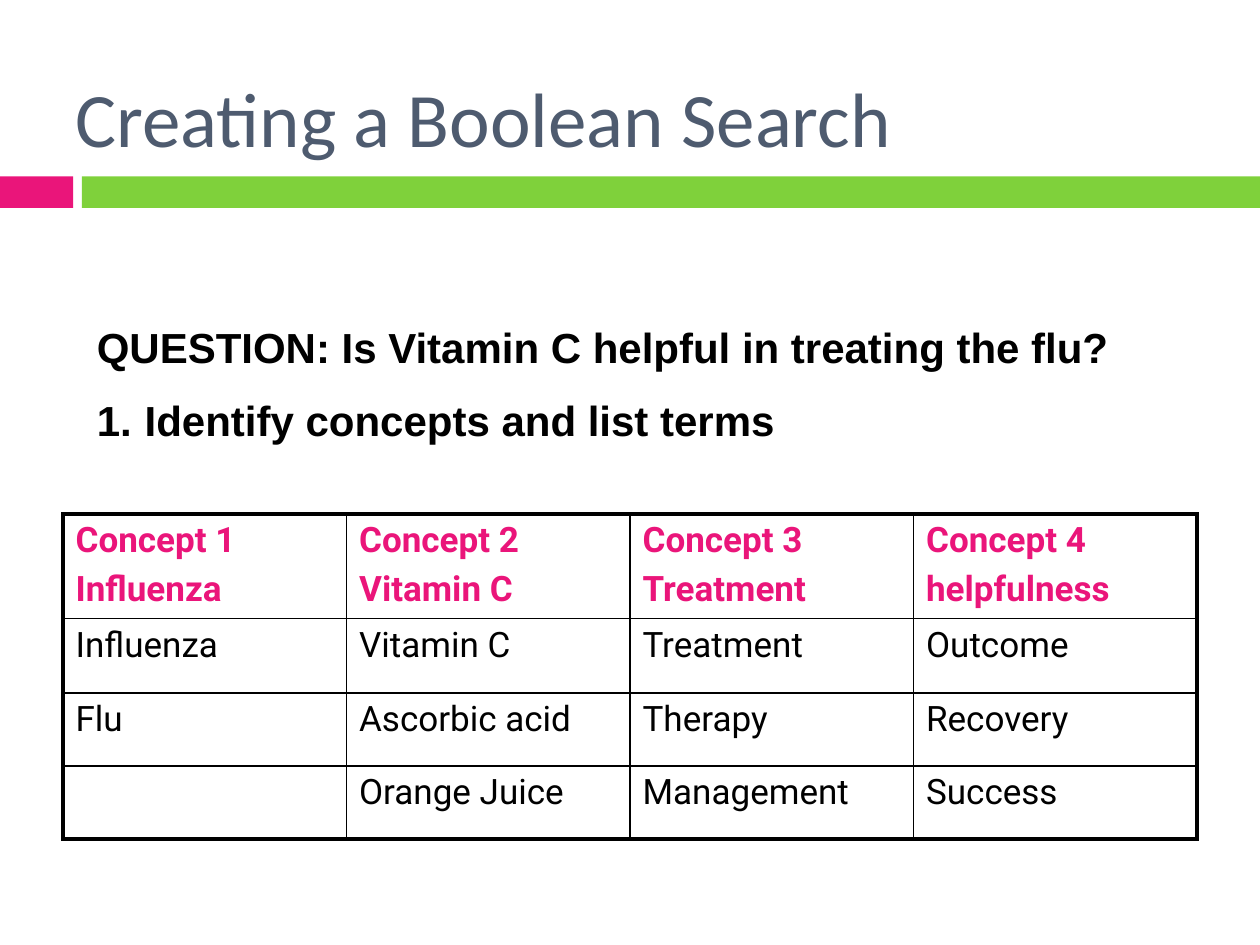
from lxml import etree
from pptx import Presentation
from pptx.dml.color import RGBColor
from pptx.enum.shapes import MSO_SHAPE
from pptx.enum.text import MSO_ANCHOR
from pptx.oxml.ns import qn
from pptx.util import Inches, Pt

RECTANGLE = MSO_SHAPE.RECTANGLE
MIDDLE = MSO_ANCHOR.MIDDLE

PINK = RGBColor(0xEA, 0x15, 0x7A)
GREEN = RGBColor(0x7F, 0xD1, 0x3B)
SLATE = RGBColor(0x4E, 0x5B, 0x6F)
BLACK = RGBColor(0, 0, 0)

SLIDE_W, SLIDE_H = 10, 7.5
THIN, THICK = 1, 2.25

CONCEPTS = [
    ["Concept 1\nInfluenza", "Concept 2\nVitamin C", "Concept 3\nTreatment", "Concept 4\nhelpfulness"],
    ["Influenza", "Vitamin C", "Treatment", "Outcome"],
    ["Flu", "Ascorbic acid", "Therapy", "Recovery"],
    ["", "Orange Juice", "Management", "Success"],
]
ROW_SHARES = [0.83, 0.59, 0.58, 0.58]


def inches(box):
    return [Inches(length) for length in box]


def format_text(frame, font_name, size, color, bold=False, space_before=0):
    for paragraph in frame.paragraphs:
        paragraph.space_before = Pt(space_before)
        for run in paragraph.runs:
            run.font.name = font_name
            run.font.size = Pt(size)
            run.font.bold = bold
            run.font.color.rgb = color


def add_text(slide, box, text):
    frame = slide.shapes.add_textbox(*inches(box)).text_frame
    frame.word_wrap = True
    frame.text = text
    return frame


def add_title(slide, box):
    title = add_text(slide, box, "Creating a Boolean Search")
    title.vertical_anchor = MIDDLE
    format_text(title, "Calibri", 44, SLATE)


def add_divider(slide, box):
    """Draw a short pink bar and a long green bar with a gap between them."""
    left, top, width, height = box
    pink_width, green_start = 0.058 * width, 0.065 * width
    bars = [(left, pink_width, PINK), (left + green_start, width - green_start, GREEN)]
    for bar_left, bar_width, color in bars:
        bar = slide.shapes.add_shape(RECTANGLE, *inches((bar_left, top, bar_width, height)))
        bar.shadow.inherit = False
        bar.fill.solid()
        bar.fill.fore_color.rgb = color
        bar.line.fill.background()


def add_question(slide, box):
    question = add_text(slide, box, "QUESTION: Is Vitamin C helpful in treating the flu?\n"
                                    "Identify concepts and list terms")
    format_text(question, "Arial", 24, BLACK, bold=True, space_before=13)
    indent = Inches(0.38)
    for paragraph in question.paragraphs:
        properties = paragraph._p.get_or_add_pPr()
        properties.set("marL", str(indent))
        properties.set("indent", str(-indent))
    step = question.paragraphs[1]._p.get_or_add_pPr()
    etree.SubElement(step, qn("a:buFont"), typeface="+mj-lt")
    etree.SubElement(step, qn("a:buAutoNum"), type="arabicPeriod")


def set_borders(cell, widths):
    """Give the cell black borders; widths are left, right, top, bottom in points."""
    properties = cell._tc.get_or_add_tcPr()
    for position, (side, width) in enumerate(zip("LRTB", widths)):
        border = etree.Element(qn(f"a:ln{side}"), w=str(Pt(width)))
        fill = etree.SubElement(border, qn("a:solidFill"))
        etree.SubElement(fill, qn("a:srgbClr"), val=str(BLACK))
        properties.insert(position, border)


def add_concept_table(slide, box):
    row_count, column_count = len(CONCEPTS), len(CONCEPTS[0])
    table = slide.shapes.add_table(row_count, column_count, *inches(box)).table
    table.first_row = table.horz_banding = False
    for row, share in zip(table.rows, ROW_SHARES):
        row.height = Inches(box[3] * share / sum(ROW_SHARES))
    for r, terms in enumerate(CONCEPTS):
        for c, term in enumerate(terms):
            cell = table.cell(r, c)
            cell.text_frame.text = term
            is_header = r == 0
            format_text(cell.text_frame, "Roboto", 20, PINK if is_header else BLACK,
                        bold=is_header, space_before=4)
            cell.fill.background()
            on_edge = (c == 0, c == column_count - 1, r == 0, r == row_count - 1)
            set_borders(cell, [THICK if edge else THIN for edge in on_edge])


def main():
    presentation = Presentation()
    presentation.slide_width, presentation.slide_height = Inches(SLIDE_W), Inches(SLIDE_H)
    slide = presentation.slides.add_slide(presentation.slide_layouts[6])
    margin = 0.05 * SLIDE_W
    content_width = SLIDE_W - 2 * margin
    add_divider(slide, (0, 1.4, SLIDE_W, 0.25))
    add_title(slide, (margin, 0.3, content_width, 1.25))
    add_concept_table(slide, (margin, 4.08, content_width, 2.58))
    add_question(slide, (0.67, 2.5, 8.42, 1.1))
    presentation.save("out.pptx")


if __name__ == "__main__":
    main()
